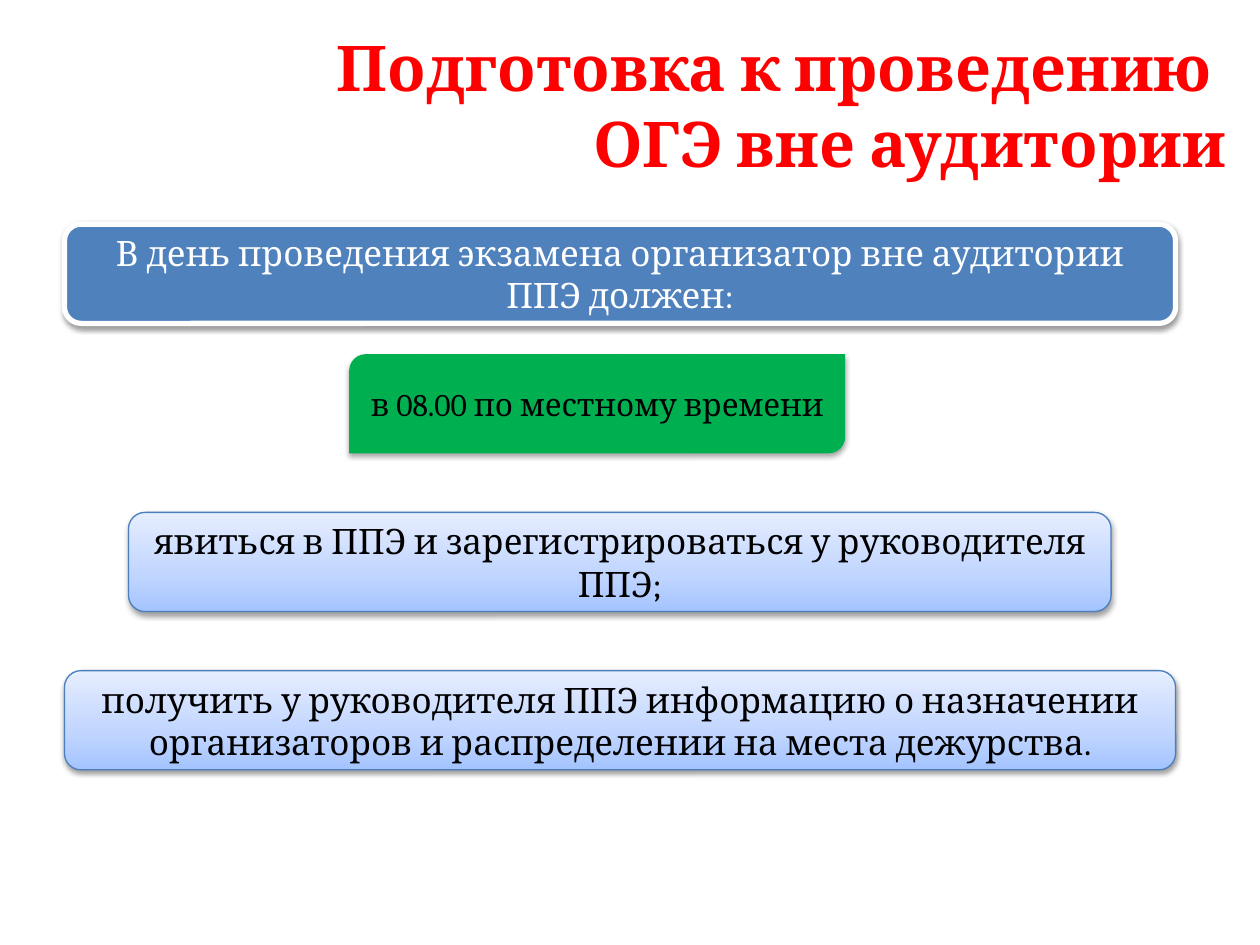
from copy import deepcopy
from dataclasses import dataclass

from lxml import etree
from pptx import Presentation
from pptx.dml.color import RGBColor
from pptx.enum.shapes import MSO_SHAPE
from pptx.enum.text import MSO_ANCHOR, PP_ALIGN
from pptx.oxml.ns import qn
from pptx.util import Cm, Pt

ROUND = MSO_SHAPE.ROUNDED_RECTANGLE
DIAGONAL = MSO_SHAPE.ROUND_2_DIAG_RECTANGLE
CENTER, RIGHT = PP_ALIGN.CENTER, PP_ALIGN.RIGHT
MIDDLE = MSO_ANCHOR.MIDDLE
FONT = "Cambria"
SLIDE_W, SLIDE_H = 25.4, 19.05
BOX_H = 2.0
STEP_TOP, STEP_PITCH = 7.14, 3.19
PALE_BLUE = ((0, "A4C4FF"), (0.35, "BFD4FF"), (1, "E6EEFF"))


@dataclass
class Box:
    text: str
    left: float
    top: float
    width: float
    fill: str | tuple = PALE_BLUE
    line: str | None = "4B7EBC"
    line_pt: float = 0.75
    color: str = "000000"
    size: int = 20
    shape: MSO_SHAPE = ROUND
    inset: tuple = (0.23, 0.23)
    shadow: tuple = (38, 20000)


BOXES = (
    Box("В день проведения экзамена организатор вне аудитории ППЭ должен:",
        1.3, 4.52, 22.4, fill="4F81BD", line="FFFFFF", line_pt=3, color="FFFFFF"),
    Box("в 08.00 по местному времени", 7.04, STEP_TOP, 10, fill="00B050", line=None,
        size=18, shape=DIAGONAL, inset=(0.25, 0.13), shadow=(35, 23000)),
    Box("явиться в ППЭ и зарегистрироваться у руководителя ППЭ;",
        2.59, STEP_TOP + STEP_PITCH, 19.81),
    Box("получить у руководителя ППЭ информацию о назначении "
        "организаторов и распределении на места дежурства.",
        1.3, STEP_TOP + 2 * STEP_PITCH, 22.4),
)


def rgb(value: str) -> RGBColor:
    return RGBColor.from_string(value)


def add_run(p, text: str, size: int, color: str, align: PP_ALIGN, bold: bool = False) -> None:
    p.alignment = align
    r = p.add_run()
    r.text = text
    r.font.name = FONT
    r.font.size = Pt(size)
    r.font.bold = bold
    r.font.color.rgb = rgb(color)


def set_fill(sp, fill: str | tuple) -> None:
    if isinstance(fill, str):
        sp.fill.solid()
        sp.fill.fore_color.rgb = rgb(fill)
        return
    sp.fill.gradient()
    sp.fill.gradient_angle = 90
    stops = sp._element.spPr.find(".//" + qn("a:gsLst"))
    while len(stops) < len(fill):
        stops.append(deepcopy(stops[0]))
    for stop, (position, color) in zip(sp.fill.gradient_stops, fill):
        stop.position = position
        stop.color.rgb = rgb(color)


def add_shadow(sp, alpha: int, distance: int) -> None:
    sp.shadow.inherit = False
    effects = sp._element.spPr.find(qn("a:effectLst"))
    outer = etree.SubElement(effects, qn("a:outerShdw"), blurRad="40000",
                             dist=str(distance), dir="5400000", rotWithShape="0")
    color = etree.SubElement(outer, qn("a:srgbClr"), val="000000")
    etree.SubElement(color, qn("a:alpha"), val=str(alpha * 1000))


def add_box(s, box: Box) -> None:
    sp = s.shapes.add_shape(box.shape, Cm(box.left), Cm(box.top), Cm(box.width), Cm(BOX_H))
    set_fill(sp, box.fill)
    if box.line:
        sp.line.color.rgb = rgb(box.line)
        sp.line.width = Pt(box.line_pt)
    else:
        sp.line.fill.background()
    add_shadow(sp, *box.shadow)
    tf = sp.text_frame
    tf.word_wrap = True
    tf.vertical_anchor = MIDDLE
    tf.margin_left = tf.margin_right = Cm(box.inset[0])
    tf.margin_top = tf.margin_bottom = Cm(box.inset[1])
    add_run(tf.paragraphs[0], box.text, box.size, box.color, CENTER)


def add_title(s, lines: tuple[str, ...]) -> None:
    sp = s.shapes.title
    sp.left, sp.top, sp.width, sp.height = Cm(2.9), Cm(0.51), Cm(22.07), Cm(3.18)
    tf = sp.text_frame
    tf.vertical_anchor = MIDDLE
    for i, line in enumerate(lines):
        p = tf.add_paragraph() if i else tf.paragraphs[0]
        add_run(p, line, 36, "FF0000", RIGHT, bold=True)


def main() -> None:
    prs = Presentation()
    prs.slide_width, prs.slide_height = Cm(SLIDE_W), Cm(SLIDE_H)
    s = prs.slides.add_slide(prs.slide_layouts[5])
    add_title(s, ("Подготовка к проведению ", "ОГЭ вне аудитории"))
    for box in BOXES:
        add_box(s, box)
    prs.save("out.pptx")


if __name__ == "__main__":
    main()
